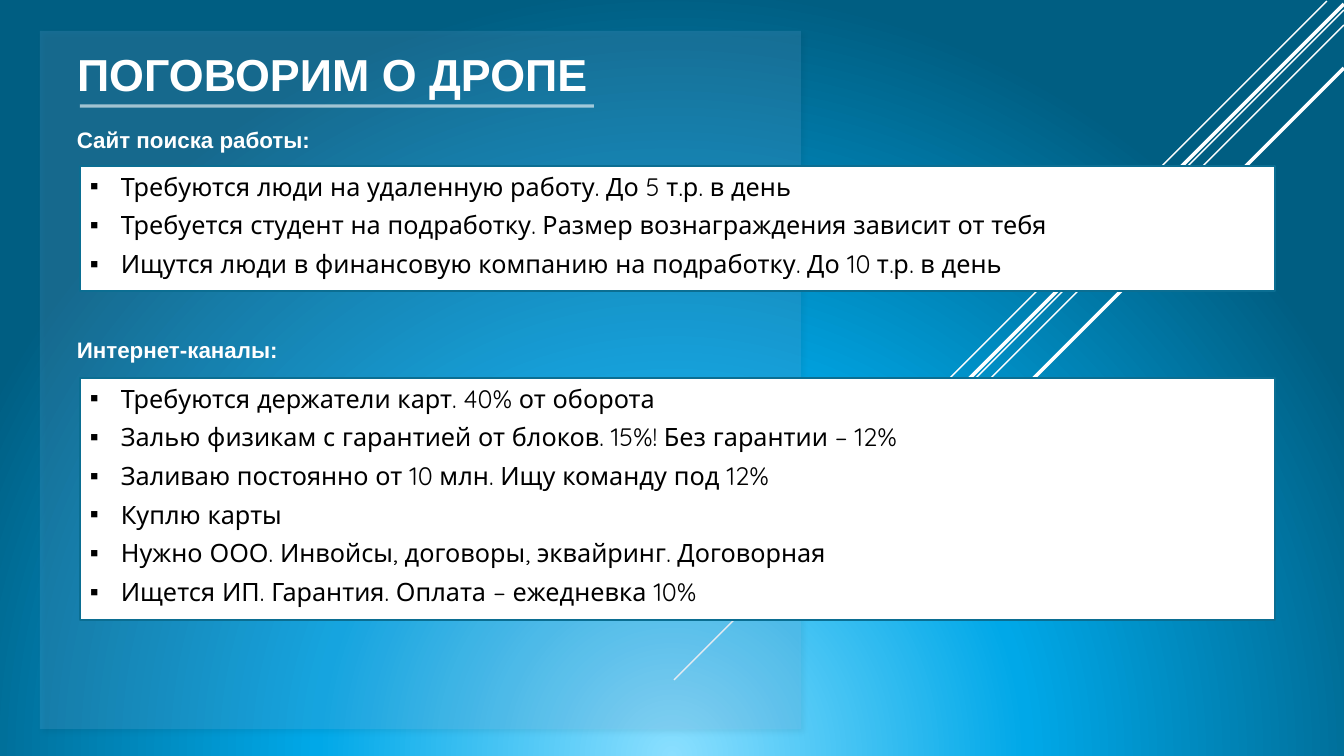
from pptx import Presentation
from pptx.util import Emu, Pt
from pptx.dml.color import RGBColor
from pptx.enum.shapes import MSO_SHAPE as Shape, MSO_CONNECTOR as Link
from pptx.enum.text import PP_ALIGN as Align, MSO_ANCHOR as Anchor, MSO_AUTO_SIZE as Fit
from pptx.oxml import parse_xml
from pptx.oxml.ns import qn
from lxml.etree import SubElement

TITLE = "ПОГОВОРИМ О ДРОПЕ"
GROUPS = [
    ("Сайт поиска работы:", 121, 166, 125, [
        "Требуются люди на удаленную работу. До 5 т.р. в день",
        "Требуется студент на подработку. Размер вознаграждения зависит от тебя",
        "Ищутся люди в финансовую компанию на подработку. До 10 т.р. в день",
    ]),
    ("Интернет-каналы:", 331, 378, 242, [
        "Требуются держатели карт. 40% от оборота",
        "Залью физикам с гарантией от блоков. 15%! Без гарантии – 12%",
        "Заливаю постоянно от 10 млн. Ищу команду под 12%",
        "Куплю карты",
        "Нужно ООО. Инвойсы, договоры, эквайринг. Договорная",
        "Ищется ИП. Гарантия. Оплата – ежедневка 10%",
    ]),
]
RAYS = [(1327, 1, 420, 1), (1344, 10, 670, 1), (1344, 25, 547, 1),
        (1344, 4, 534, 2.5), (1344, 68, 478, 2.5)]
COLORS = {"white": "FFFFFF", "black": "000000", "edge": "0B6E92", "panel": "99CCFF"}
GLOW = [(0, "8ADFFF"), (46, "00A8E8"), (100, "005E82")]
NS = 'xmlns:a="http://schemas.openxmlformats.org/drawingml/2006/main"'


def px(n):
    return Emu(round(n * 914400 / 100.8))


def box(*sides):
    return [px(n) for n in sides]


def rgb(name):
    return RGBColor.from_string(COLORS[name])


def style(par, size, face, color, bold=False):
    for run in par.runs:
        font = run.font
        font.size, font.name, font.bold = Pt(size), face, bold
        font.color.rgb = rgb(color)


def fade(fill, share):
    tint = fill._xPr.find(".//" + qn("a:srgbClr"))
    SubElement(tint, qn("a:alpha"), val=str(share * 1000))


def line(x1, y1, x2, y2, width):
    link = slide.shapes.add_connector(Link.STRAIGHT, *box(x1, y1, x2, y2))
    link.line.color.rgb = rgb("white")
    link.line.width = Pt(width)
    SubElement(link._element.spPr, qn("a:effectLst"))
    return link


def rect(color, *sides):
    shape = slide.shapes.add_shape(Shape.RECTANGLE, *box(*sides))
    shape.shadow.inherit = False
    shape.fill.solid()
    shape.fill.fore_color.rgb = rgb(color)
    return shape


def label(text, top):
    frame = slide.shapes.add_textbox(*box(67, top, 1257, 37)).text_frame
    frame.word_wrap = True
    par = frame.paragraphs[0]
    par.text = text
    par.alignment, par.space_after = Align.JUSTIFY, Pt(6)
    style(par, 16, "Arial", "white", True)


def card(items, top, height):
    shape = rect("white", 80, top, 1195, height)
    shape.line.color.rgb = rgb("edge")
    shape.line.width = Pt(1.25)
    frame = shape.text_frame
    frame.word_wrap, frame.vertical_anchor = True, Anchor.TOP
    frame.text = "\n".join(items)
    for par in frame.paragraphs:
        par.alignment, par.space_before = Align.LEFT, Pt(6)
        par.line_spacing = Pt(21.6)
        style(par, 18, "Quicksand", "black")
        props = par._p.get_or_add_pPr()
        props.set("marL", str(px(31)))
        props.set("indent", str(-px(31)))
        SubElement(props, qn("a:buFont"), typeface="Arial")
        SubElement(props, qn("a:buChar"), char="▪")


deck = Presentation()
deck.slide_width, deck.slide_height = box(1344, 756)
slide = deck.slides.add_slide(deck.slide_layouts[5])

back = slide.background.fill
back.solid()
stops = "".join(f'<a:gs pos="{pos * 1000}"><a:srgbClr val="{tone}"/></a:gs>'
                for pos, tone in GLOW)
glow = parse_xml(f'<a:gradFill {NS} rotWithShape="1"><a:gsLst>{stops}</a:gsLst>'
                 '<a:path path="circle"><a:fillToRect l="50000" t="130000" '
                 'r="50000" b="-30000"/></a:path></a:gradFill>')
flat = back._xPr.find(qn("a:solidFill"))
back._xPr.replace(flat, glow)

for x, y, run, width in RAYS:
    line(x, y, x - run, y + run, width)

panel = rect("panel", 40, 31, 761, 698)
panel.line.fill.background()
fade(panel.fill, 15)
shade = SubElement(panel._element.spPr.find(qn("a:effectLst")), qn("a:outerShdw"),
                   blurRad=str(Pt(4)), dist=str(Pt(3)), dir="2700000",
                   algn="tl", rotWithShape="0")
dark = SubElement(shade, qn("a:srgbClr"), val=COLORS["black"])
SubElement(dark, qn("a:alpha"), val="40000")

title = slide.shapes.title
title.left, title.top, title.width, title.height = box(67, 46, 1208, 60)
head = title.text_frame
head.text = TITLE
head.word_wrap, head.auto_size, head.vertical_anchor = True, Fit.NONE, Anchor.BOTTOM
head.paragraphs[0].alignment = Align.LEFT
style(head.paragraphs[0], 32, "Arial", "white", True)
slide.shapes._spTree.append(title._element)

rule = line(80, 106, 594, 106, 2.25)
fade(rule.line.fill, 60)

for name, top, start, height, items in GROUPS:
    label(name, top)
    card(items, start, height)

deck.save("out.pptx")
